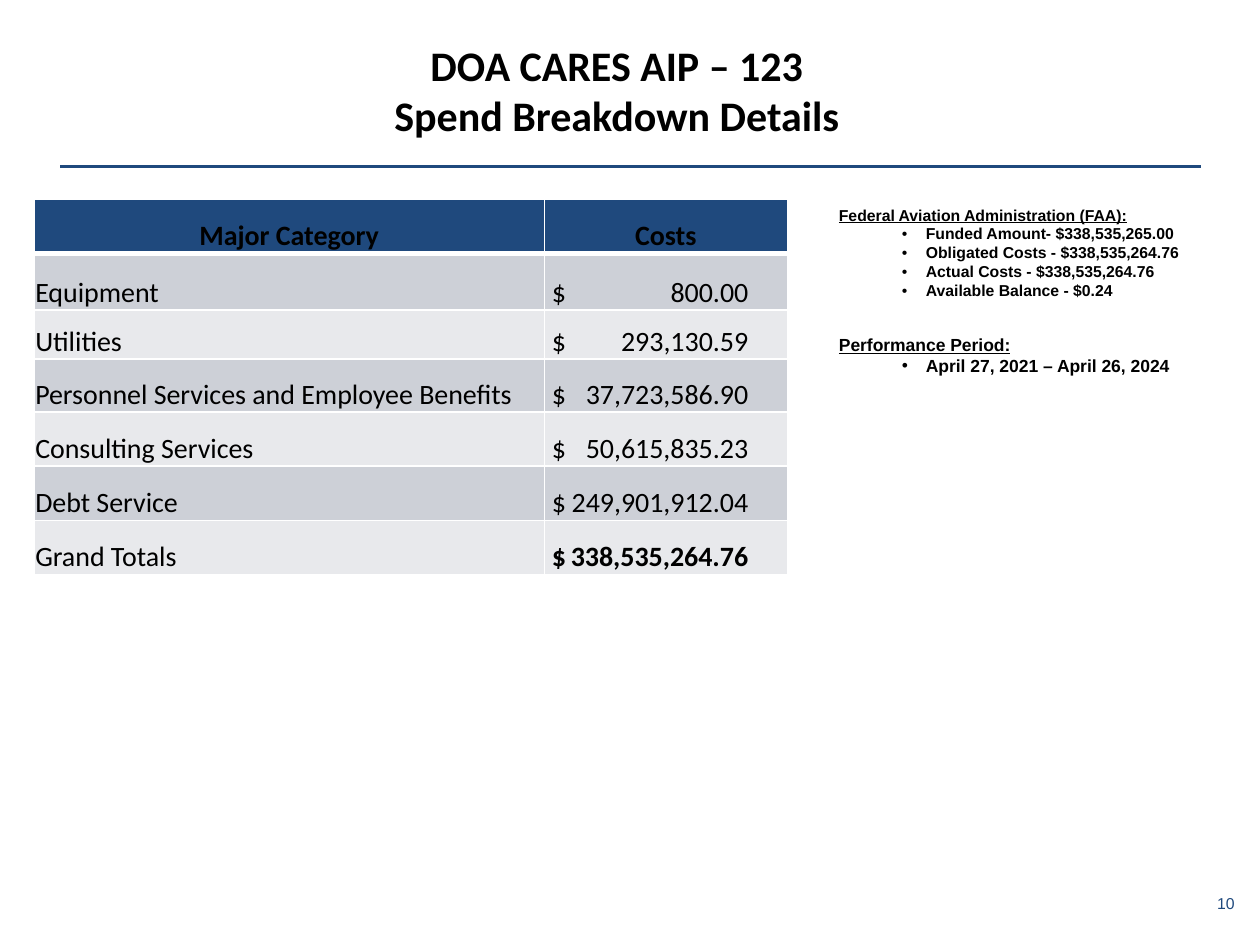
import pptx
import pptx.util
import pptx.dml.color
import pptx.enum.shapes
import pptx.enum.text
import pptx.oxml
import pptx.oxml.ns
from dataclasses import dataclass

Inches = pptx.util.Inches
Align = pptx.enum.text.PP_ALIGN
Anchor = pptx.enum.text.MSO_ANCHOR


@dataclass(frozen=True)
class Theme:
    navy: str = "1F497D"
    black: str = "000000"
    white: str = "FFFFFF"
    bands: tuple = ("CDD0D7", "E8E9EC")
    head: str = "Calibri"
    body: str = "Arial"
    title: int = 24
    table: int = 16
    page: int = 9


@dataclass(frozen=True)
class Note:
    top: float
    height: float
    size: int
    title: str
    items: tuple


@dataclass(frozen=True)
class Cost:
    label: str
    amount: str
    height: float
    bold: bool = False


THEME = Theme()

COSTS = (
    Cost("Equipment", "800.00", 0.45),
    Cost("Utilities", "293,130.59", 0.39),
    Cost("Personnel Services and Employee Benefits", "37,723,586.90", 0.42),
    Cost("Consulting Services", "50,615,835.23", 0.43),
    Cost("Debt Service", "249,901,912.04", 0.43),
    Cost("Grand Totals", "338,535,264.76", 0.43, True),
)

NOTES = (
    Note(1.58, 1.18, 9, "Federal Aviation Administration (FAA):", (
        "Funded Amount- $338,535,265.00",
        "Obligated Costs - $338,535,264.76",
        "Actual Costs - $338,535,264.76",
        "Available Balance - $0.24",
    )),
    Note(2.6, 0.77, 10, "Performance Period:", (
        "April 27, 2021 – April 26, 2024",
    )),
)


def tint(code: str):
    return pptx.dml.color.RGBColor.from_string(code)


def node(xml: str):
    space = pptx.oxml.ns.nsdecls("a")
    return pptx.oxml.parse_xml(xml.replace("NS", space, 1))


def write(para, text: str, color: str = THEME.black, **style) -> None:
    run = para.add_run()
    run.text = text
    for key, value in style.items():
        setattr(run.font, key, value)
    run.font.color.rgb = tint(color)


def add_box(slide, left: float, top: float, width: float, height: float, **style):
    box = slide.shapes.add_textbox(*map(Inches, (left, top, width, height)))
    frame = box.text_frame
    for key, value in {"word_wrap": True, **style}.items():
        setattr(frame, key, value)
    return frame


def add_lines(frame, count: int) -> list:
    return [frame.paragraphs[0]] + [frame.add_paragraph() for _ in range(count - 1)]


def add_note(slide, note: Note) -> None:
    frame = add_box(slide, 6.56, note.top, 3.17, note.height)
    style = {"name": THEME.body, "size": pptx.util.Pt(note.size), "bold": True}
    first, *rest = add_lines(frame, 1 + len(note.items))
    write(first, note.title, underline=True, **style)
    for para, item in zip(rest, note.items):
        props = para._p.get_or_add_pPr()
        props.set("marL", str(Inches(0.69)))
        props.set("indent", str(Inches(-0.19)))
        props.append(node('<a:buFont NS typeface="Arial"/>'))
        props.append(node('<a:buChar NS char="•"/>'))
        write(para, item, **style)


def edge(cell, side: str, width: float) -> None:
    cell._tc.get_or_add_tcPr().append(node(
        f'<a:ln{side} NS w="{pptx.util.Pt(width)}"><a:solidFill>'
        f'<a:srgbClr val="{THEME.white}"/></a:solidFill></a:ln{side}>'))


def add_cell(cell, text: str, fill: str, widths: dict, align, left: float = 0.01,
             tab: float = 0, bold: bool = False) -> None:
    form = {
        "vertical_anchor": Anchor.BOTTOM,
        "margin_left": Inches(left),
        "margin_right": Inches(0.01),
        "margin_top": Inches(0.01),
        "margin_bottom": 0,
    }
    for key, value in form.items():
        setattr(cell, key, value)
    for side in "LRTB":
        edge(cell, side, widths.get(side, 1))
    cell.fill.solid()
    cell.fill.fore_color.rgb = tint(fill)
    para = cell.text_frame.paragraphs[0]
    para.alignment = align
    if tab:
        para._p.get_or_add_pPr().append(node(
            f'<a:tabLst NS><a:tab pos="{Inches(tab)}" algn="r"/></a:tabLst>'))
    write(para, text, name=THEME.head, size=pptx.util.Pt(THEME.table), bold=bold)


def add_costs(slide) -> None:
    cols = (4.05, 1.93)
    rows = (0.43, *(cost.height for cost in COSTS))
    shape = slide.shapes.add_table(len(rows), len(cols), Inches(0.27), Inches(1.58),
                                   Inches(sum(cols)), Inches(sum(rows)))
    table = shape.table
    table.horz_banding = False
    for col, width in zip(table.columns, cols):
        col.width = Inches(width)
    for row, height in zip(table.rows, rows):
        row.height = Inches(height)

    # Header row, with a thick rule below it
    for col, text in enumerate(("Major Category", "Costs")):
        add_cell(table.cell(0, col), text, THEME.navy, {"B": 3}, Align.CENTER, bold=True)

    # Cost rows: the amounts end at a right tab
    for row, cost in enumerate(COSTS, 1):
        fill = THEME.bands[(row - 1) % 2]
        widths = {"T": 3} if row == 1 else {}
        add_cell(table.cell(row, 0), cost.label, fill, widths, Align.LEFT)
        add_cell(table.cell(row, 1), f"$\t{cost.amount}", fill, widths, Align.LEFT,
                 left=0.06, tab=1.56, bold=cost.bold)


def add_rule(slide) -> None:
    kind = pptx.enum.shapes.MSO_CONNECTOR.STRAIGHT
    rule = slide.shapes.add_connector(kind, *map(Inches, (0.48, 1.32, 9.53, 1.32)))
    rule.line.color.rgb = tint(THEME.navy)
    rule.line.width = pptx.util.Pt(1.5)
    rule._element.spPr.append(node("<a:effectLst NS/>"))


def main() -> None:
    deck = pptx.Presentation()
    deck.slide_width, deck.slide_height = Inches(10), Inches(7.5)
    slide = deck.slides.add_slide(deck.slide_layouts[6])

    # Rule and page number
    add_rule(slide)
    page = add_box(slide, 9.57, 7.05, 0.33, 0.24, word_wrap=False,
                   margin_left=Inches(0.09), margin_right=Inches(0.09),
                   margin_top=Inches(0.04), margin_bottom=Inches(0.04))
    write(page.paragraphs[0], "10", THEME.navy, name=THEME.body,
          size=pptx.util.Pt(THEME.page))

    # Title
    title = add_box(slide, 0.83, 0.19, 8.08, 1.04, vertical_anchor=Anchor.MIDDLE,
                    margin_left=Inches(0.15))
    lines = ("DOA CARES AIP – 123", "Spend Breakdown Details")
    for para, text in zip(add_lines(title, len(lines)), lines):
        para.alignment = Align.CENTER
        write(para, text, name=THEME.head, size=pptx.util.Pt(THEME.title), bold=True)

    # Table and side notes
    add_costs(slide)
    for note in NOTES:
        add_note(slide, note)

    deck.save("out.pptx")


if __name__ == "__main__":
    main()
